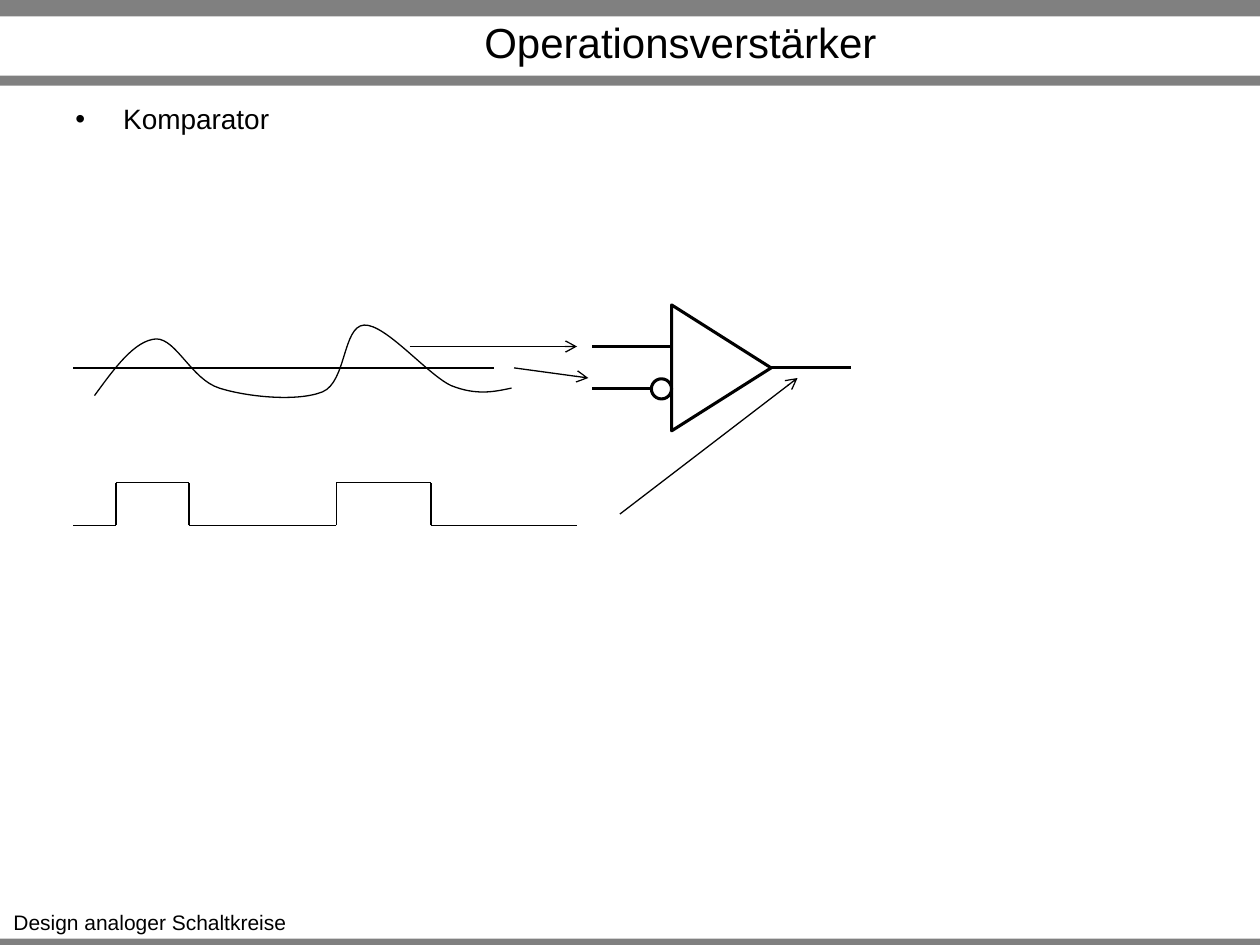
from lxml import etree
from pptx import Presentation
from pptx.dml.color import RGBColor
from pptx.enum.shapes import MSO_CONNECTOR, MSO_SHAPE
from pptx.enum.text import MSO_ANCHOR, MSO_AUTO_SIZE, PP_ALIGN
from pptx.oxml.ns import qn
from pptx.util import Inches, Pt

LINE = MSO_CONNECTOR.STRAIGHT
RECT, OVAL = MSO_SHAPE.RECTANGLE, MSO_SHAPE.OVAL
TRIANGLE = MSO_SHAPE.ISOSCELES_TRIANGLE
MIDDLE, CENTER, LEFT = MSO_ANCHOR.MIDDLE, PP_ALIGN.CENTER, PP_ALIGN.LEFT
GROW, FIXED = MSO_AUTO_SIZE.SHAPE_TO_FIT_TEXT, MSO_AUTO_SIZE.NONE
BLACK, GREY, WHITE = "000000", "808080", "FFFFFF"
THIN, THICK = 0.75, 1.75


def paint(color, hue):
    """Set a colour format from a hex string."""
    color.rgb = RGBColor.from_string(hue)


def write(frame, text, size, align):
    """Write one run into the first paragraph."""
    para = frame.paragraphs[0]
    para.alignment = align
    run = para.add_run()
    run.text = text
    run.font.size = Pt(size)
    run.font.name = "Arial"
    paint(run.font.color, BLACK)
    return para


def style(shape, fill=None, weight=None):
    """Give a shape a flat fill and a black outline, or neither."""
    shape.shadow.inherit = False
    if fill:
        shape.fill.solid()
        paint(shape.fill.fore_color, fill)
    else:
        shape.fill.background()
    if weight:
        paint(shape.line.color, BLACK)
        shape.line.width = Pt(weight)
    else:
        shape.line.fill.background()


def add_shape(slide, kind, box, fill=None, weight=None):
    """Add a styled preset shape."""
    shape = slide.shapes.add_shape(kind, *map(Inches, box))
    style(shape, fill, weight)
    return shape


def add_line(slide, start, end, weight=THIN, arrow=False):
    """Add a straight line, with an open arrowhead at its end if asked."""
    line = slide.shapes.add_connector(LINE, *map(Inches, (*start, *end)))
    paint(line.line.color, BLACK)
    line.line.width = Pt(weight)
    props = line._element.spPr
    if arrow:
        etree.SubElement(props.find(qn("a:ln")), qn("a:tailEnd"), type="arrow")
    etree.SubElement(props, qn("a:effectLst"))


def add_frame(slide, title, footer):
    """Place the grey bars, the title and the footer."""
    for top, height in ((0, 0.13), (0.6, 0.08), (7.45, 0.08)):
        add_shape(slide, RECT, (0, top, 10, height), GREY)
    head = slide.shapes.title
    head.left, head.top, head.width, head.height = map(
        Inches, (1.3, 0.14, 8.2, 0.38))
    head.text_frame.auto_size = FIXED
    head.text_frame.vertical_anchor = MIDDLE
    write(head.text_frame, title, 24, CENTER)
    foot = slide.shapes.add_textbox(*map(Inches, (0, 7.17, 2.38, 0.3)))
    foot.text_frame.word_wrap = False
    foot.text_frame.auto_size = GROW
    write(foot.text_frame, footer, 12, CENTER)


def add_body(slide, box, text):
    """Place the bulleted body text."""
    body = slide.shapes.add_textbox(*map(Inches, box))
    body.text_frame.word_wrap = True
    para = write(body.text_frame, text, 16, LEFT)
    props = para._p.get_or_add_pPr()
    indent = Inches(0.38)
    props.set("marL", str(indent))
    props.set("indent", str(-indent))
    etree.SubElement(props, qn("a:buFont"), typeface="Arial")
    etree.SubElement(props, qn("a:buChar"), char="•")


def add_wave(slide, left, top):
    """Draw the input signal as a chain of Bezier curves."""
    spots = [(0, 0.56),
             (0.16, 0.34), (0.32, 0.12), (0.49, 0.11),
             (0.65, 0.11), (0.77, 0.43), (0.99, 0.5),
             (1.21, 0.57), (1.61, 0.61), (1.81, 0.53),
             (2, 0.45), (1.97, 0.01), (2.14, 0),
             (2.31, -0.01), (2.64, 0.39), (2.83, 0.48),
             (3.03, 0.56), (3.17, 0.53), (3.31, 0.5)]
    spots = [(Inches(left + x), Inches(top + y)) for x, y in spots]
    pen = slide.shapes.build_freeform(*spots[0])
    pen.add_line_segments(spots[1:], close=False)
    wave = pen.convert_to_shape()
    style(wave, weight=THIN)
    track = wave._element.find(".//" + qn("a:path"))
    steps = track.findall(qn("a:lnTo"))
    for i in range(0, len(steps), 3):
        curve = etree.SubElement(track, qn("a:cubicBezTo"))
        for step in steps[i:i + 3]:
            curve.append(step[0])
            track.remove(step)


def add_pulse(slide, left, top, height):
    """Draw the square output signal."""
    edges = [0, 0.34, 0.92, 2.09, 2.84, 4]
    low, high = top + height, top
    for i, (start, end) in enumerate(zip(edges, edges[1:])):
        level = high if i % 2 else low
        add_line(slide, (left + start, level), (left + end, level))
    for edge in edges[1:-1]:
        add_line(slide, (left + edge, low), (left + edge, high))


def add_opamp(slide, left, top, width, height):
    """Draw the comparator symbol with its three leads."""
    wing, lead, dot = width, 0.63, 0.16
    turn = (height - wing) / 2
    body = add_shape(slide, TRIANGLE, (left - turn, top + turn, height, wing),
                     weight=THICK)
    body.rotation = 90
    mid = top + height / 2
    for level, start in ((mid - height / 6, left - lead),
                         (mid, left + wing),
                         (mid + height / 6, left - lead)):
        add_line(slide, (start, level), (start + lead, level), THICK)
    add_shape(slide, OVAL, (left - dot, level - dot / 2, dot, dot),
              WHITE, THICK)


def main():
    """Build the slide and save it."""
    deck = Presentation()
    deck.slide_width, deck.slide_height = Inches(10), Inches(7.5)
    slide = deck.slides.add_slide(deck.slide_layouts[5])
    add_frame(slide, "Operationsverstärker", "Design analoger Schaltkreise")
    add_opamp(slide, 5.33, 2.42, 0.79, 1)
    add_body(slide, (0.5, 0.76, 9, 6.54), "Komparator")
    add_wave(slide, 0.75, 2.58)
    add_line(slide, (0.58, 2.92), (3.92, 2.92))
    add_pulse(slide, 0.58, 3.83, 0.34)
    for start, end in (((4.08, 2.92), (4.67, 3)),
                       ((3.25, 2.75), (4.58, 2.75)),
                       ((4.92, 4.08), (6.33, 3))):
        add_line(slide, start, end, arrow=True)
    deck.save("out.pptx")


if __name__ == "__main__":
    main()
